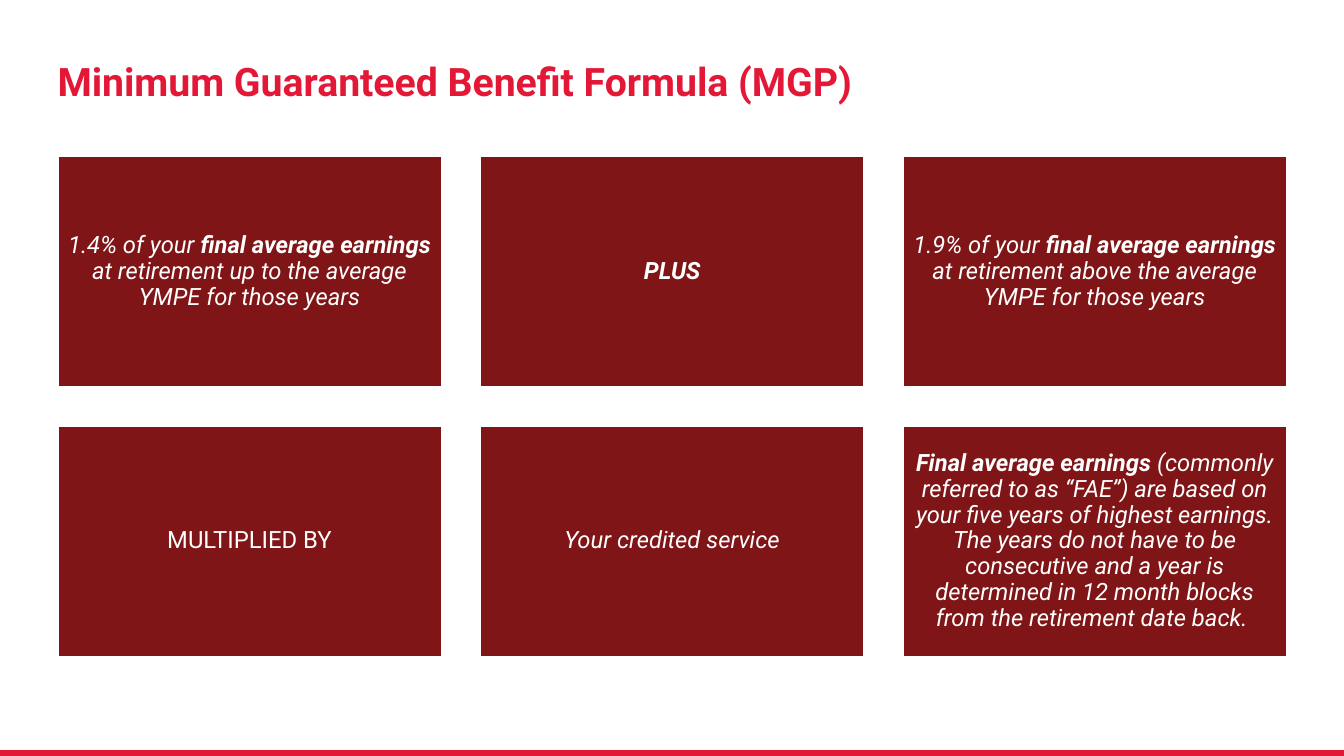
import pptx
import pptx.dml.color
import pptx.enum.shapes
import pptx.enum.text
import pptx.util
from dataclasses import dataclass

Cm = pptx.util.Cm
ALIGN = pptx.enum.text.PP_ALIGN
ANCHOR = pptx.enum.text.MSO_ANCHOR


@dataclass(frozen=True)
class Theme:
    font: str = "Roboto"
    red: str = "E31837"
    maroon: str = "7F1516"
    white: str = "FFFFFF"
    title_size: int = 28
    card_size: int = 17


THEME = Theme()
SLIDE_W, SLIDE_H = 33.87, 19.05

# Card grid, in centimetres
COLUMNS = 3
LEFT, TOP = 1.45, 3.94
CARD_W, CARD_H, GAP = 9.68, 5.82, 0.97

# Each card is a list of (text, bold, italic) runs
CARDS = [
    [("1.4% of your ", False, True),
     ("final average earnings ", True, True),
     ("at retirement up to the average YMPE for those years", False, True)],
    [("PLUS", True, True)],
    [("1.9% of your ", False, True),
     ("final average earnings ", True, True),
     ("at retirement above the average YMPE for those years", False, True)],
    [("MULTIPLIED BY", False, False)],
    [("Your credited service", False, True)],
    [("Final average earnings ", True, True),
     ("(commonly referred to as “FAE”) are based on your five years of "
      "highest earnings. The years do not have to be consecutive and a year "
      "is determined in 12 month blocks from the retirement date back. ",
      False, True)],
]


def rgb(color):
    return pptx.dml.color.RGBColor.from_string(color)


def set_attrs(obj, values):
    for name, value in values.items():
        setattr(obj, name, value)


def write_text(sp, runs, size, color, align, anchor, margin):
    tf = sp.text_frame
    set_attrs(tf, {
        "word_wrap": True,
        "auto_size": pptx.enum.text.MSO_AUTO_SIZE.NONE,
        "vertical_anchor": anchor,
        **{f"margin_{side}": Cm(margin)
           for side in ("left", "top", "right", "bottom")},
    })
    p = tf.paragraphs[0]
    set_attrs(p, {"alignment": align, "line_spacing": 0.9})
    for text, bold, italic in runs:
        r = p.add_run()
        r.text = text
        set_attrs(r.font, {"name": THEME.font, "size": pptx.util.Pt(size),
                           "bold": bold, "italic": italic})
        r.font.color.rgb = rgb(color)


def add_rect(s, left, top, width, height, fill):
    sp = s.shapes.add_shape(pptx.enum.shapes.MSO_SHAPE.RECTANGLE,
                            Cm(left), Cm(top), Cm(width), Cm(height))
    sp.shadow.inherit = False
    sp.fill.solid()
    sp.fill.fore_color.rgb = rgb(fill)
    sp.line.fill.background()
    return sp


def add_title(s, text):
    sp = s.shapes.title
    set_attrs(sp, {"left": Cm(LEFT), "top": Cm(0.64),
                   "width": Cm(31.01), "height": Cm(2)})
    write_text(sp, [(text, True, False)], THEME.title_size, THEME.red,
               ALIGN.LEFT, ANCHOR.BOTTOM, 0)


def add_card(s, index, runs):
    row, col = divmod(index, COLUMNS)
    sp = add_rect(s, LEFT + col * (CARD_W + GAP), TOP + row * (CARD_H + GAP),
                  CARD_W, CARD_H, THEME.maroon)
    sp.line.color.rgb = rgb(THEME.white)
    sp.line.width = pptx.util.Pt(1.5)
    write_text(sp, runs, THEME.card_size, THEME.white,
               ALIGN.CENTER, ANCHOR.MIDDLE, 0.18)


def main():
    prs = pptx.Presentation()
    set_attrs(prs, {"slide_width": Cm(SLIDE_W), "slide_height": Cm(SLIDE_H)})
    s = prs.slides.add_slide(prs.slide_layouts[5])

    # Footer bar
    add_rect(s, 0, 18.9, SLIDE_W, 0.15, THEME.red)

    # Heading and formula cards
    add_title(s, "Minimum Guaranteed Benefit Formula (MGP)")
    for index, runs in enumerate(CARDS):
        add_card(s, index, runs)

    prs.save("out.pptx")


if __name__ == "__main__":
    main()
